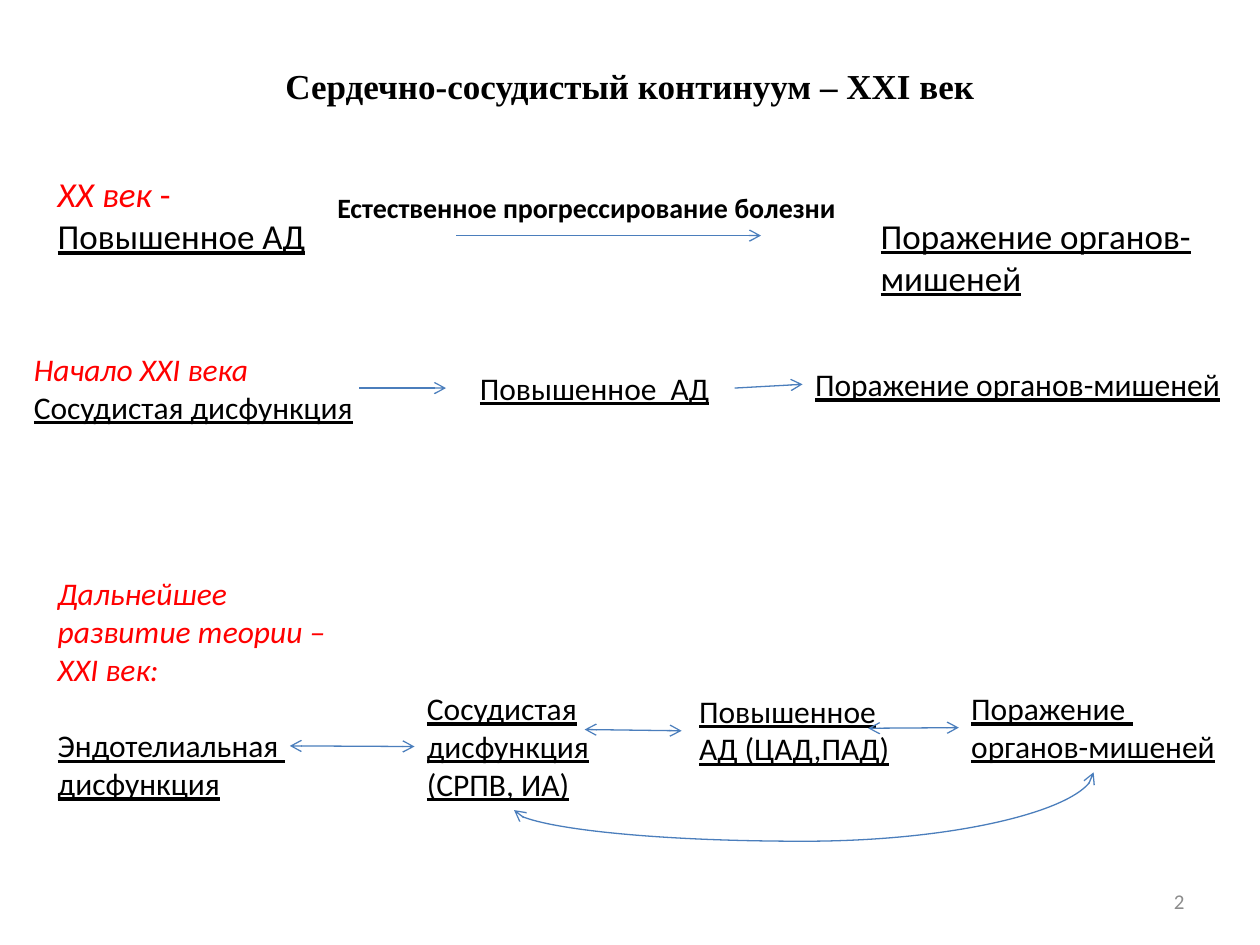
from dataclasses import dataclass

from lxml.etree import SubElement
from pptx import Presentation
from pptx.dml.color import RGBColor
from pptx.enum.shapes import MSO_CONNECTOR
from pptx.enum.text import MSO_ANCHOR, MSO_AUTO_SIZE, PP_ALIGN
from pptx.oxml.ns import qn
from pptx.shapes.autoshape import Shape
from pptx.shapes.connector import Connector
from pptx.slide import Slide
from pptx.util import Inches, Pt

BLACK = RGBColor(0x00, 0x00, 0x00)
RED = RGBColor(0xFF, 0x00, 0x00)
GRAY = RGBColor(0x8C, 0x8C, 0x8C)
BLUE = RGBColor(0x4B, 0x7E, 0xBC)
TOP, LEFT, BOTTOM, RIGHT = range(4)


@dataclass(frozen=True)
class Line:
    text: str
    color: RGBColor = BLACK
    bold: bool = False
    italic: bool = False
    underline: bool = False
    space_before: float = 0
    upright_ending: str = ""


@dataclass(frozen=True)
class Label:
    left: float
    top: float
    width: float
    height: float
    lines: tuple[Line, ...]
    size: float = 18
    wrap: bool = True
    font: str = "Calibri"
    align: PP_ALIGN = PP_ALIGN.LEFT
    anchor: MSO_ANCHOR = MSO_ANCHOR.TOP
    grow: bool = True


@dataclass(frozen=True)
class Arrow:
    begin: tuple[float, float]
    end: tuple[float, float]
    double: bool = False
    begin_site: tuple[str, int] | None = None
    end_site: tuple[str, int] | None = None


def factor(text: str, space_before: float = 0) -> Line:
    return Line(text, underline=True, space_before=space_before)


def era(text: str, upright_ending: str = "") -> Line:
    return Line(text, RED, italic=True, upright_ending=upright_ending)


LABELS = {
    "title": Label(0.5, 0.21, 9, 0.94,
                   (Line("Сердечно-сосудистый континуум – XXI век", bold=True),),
                   size=20, font="Times New Roman", align=PP_ALIGN.CENTER,
                   anchor=MSO_ANCHOR.MIDDLE, grow=False),
    "slide number": Label(7.17, 6.95, 2.33, 0.4, (Line("2", GRAY),), size=12,
                          align=PP_ALIGN.RIGHT, anchor=MSO_ANCHOR.MIDDLE, grow=False),
    "old pressure": Label(0.36, 1.32, 3.15, 0.77,
                          (era("ХХ век ", "-"), factor("Повышенное АД")), size=20),
    "old damage": Label(6.89, 1.65, 2.89, 0.77,
                        (factor("Поражение органов-мишеней"),), size=20),
    "progression": Label(2.58, 1.46, 4.2, 0.37,
                         (Line("Естественное прогрессирование болезни", bold=True),),
                         size=16, wrap=False),
    "early dysfunction": Label(0.17, 2.73, 3.5, 0.71,
                               (era("Начало XXI века"), factor("Сосудистая дисфункция"))),
    "early pressure": Label(3.71, 2.88, 2.12, 0.4, (factor("Повышенное  АД"),), wrap=False),
    "early damage": Label(6.37, 2.85, 3.45, 0.4,
                          (factor("Поражение органов-мишеней"),), wrap=False),
    "endothelial": Label(0.36, 4.51, 2.49, 1.92,
                         (era("Дальнейшее развитие теории – ХХI век:"),
                          factor("Эндотелиальная ", space_before=22),
                          factor("дисфункция"))),
    "vascular": Label(3.29, 5.42, 1.6, 1.01,
                      (factor("Сосудистая дисфункция"), factor("(СРПВ, ИА)"))),
    "pressure": Label(5.45, 5.44, 1.75, 0.71, (factor("Повышенное АД (ЦАД,ПАД)"),)),
    "damage": Label(7.61, 5.42, 2.16, 0.71,
                    (factor("Поражение "), factor("органов-мишеней")), wrap=False),
}

ARROWS = (
    Arrow((3.62, 1.87), (6.04, 1.87)),
    Arrow((2.85, 3.08), (3.54, 3.08)),
    Arrow((5.83, 3.08), (6.37, 3.05),
          begin_site=("early pressure", RIGHT), end_site=("early damage", LEFT)),
    Arrow((2.3, 5.92), (3.29, 5.92), double=True, end_site=("vascular", LEFT)),
    Arrow((4.64, 5.79), (5.41, 5.8), double=True),
    Arrow((6.89, 5.78), (7.61, 5.78), double=True, end_site=("damage", LEFT)),
)


def add_label(slide: Slide, label: Label) -> Shape:
    shape = slide.shapes.add_textbox(Inches(label.left), Inches(label.top),
                                     Inches(label.width), Inches(label.height))
    frame = shape.text_frame
    frame.word_wrap = label.wrap
    frame.auto_size = MSO_AUTO_SIZE.SHAPE_TO_FIT_TEXT if label.grow else MSO_AUTO_SIZE.NONE
    frame.vertical_anchor = label.anchor
    for index, line in enumerate(label.lines):
        paragraph = frame.add_paragraph() if index else frame.paragraphs[0]
        paragraph.alignment = label.align
        paragraph.space_before = Pt(line.space_before)
        font = paragraph.font
        font.name, font.size = label.font, Pt(label.size)
        font.bold, font.italic, font.underline = line.bold, line.italic, line.underline
        font.color.rgb = line.color
        paragraph.add_run().text = line.text
        if line.upright_ending:
            ending = paragraph.add_run()
            ending.text = line.upright_ending
            ending.font.italic = False
    return shape


def style_connector(connector: Connector, double: bool) -> None:
    connector.line.color.rgb = BLUE
    connector.line.width = Pt(0.75)
    outline = connector.line._get_or_add_ln()
    for tag in ("a:headEnd", "a:tailEnd") if double else ("a:tailEnd",):
        SubElement(outline, qn(tag), type="arrow")
    SubElement(connector._element.spPr, qn("a:effectLst"))


def add_arrow(slide: Slide, arrow: Arrow, shapes: dict[str, Shape]) -> None:
    connector = slide.shapes.add_connector(
        MSO_CONNECTOR.STRAIGHT, *map(Inches, arrow.begin + arrow.end))
    if arrow.begin_site:
        name, site = arrow.begin_site
        connector.begin_connect(shapes[name], site)
    if arrow.end_site:
        name, site = arrow.end_site
        connector.end_connect(shapes[name], site)
    style_connector(connector, arrow.double)


def add_feedback_curve(slide: Slide) -> None:
    connector = slide.shapes.add_connector(
        MSO_CONNECTOR.CURVE, Inches(6.53), Inches(8.58), Inches(6.23), Inches(3.98))
    properties = connector._element.spPr
    properties.find(qn("a:xfrm")).set("rot", str(90 * 60000))
    adjustments = properties.find(qn("a:prstGeom")).find(qn("a:avLst"))
    SubElement(adjustments, qn("a:gd"), name="adj1", fmla="val -82500")
    style_connector(connector, double=True)


def main() -> None:
    presentation = Presentation()
    presentation.slide_width, presentation.slide_height = Inches(10), Inches(7.5)
    slide = presentation.slides.add_slide(presentation.slide_layouts[6])
    shapes = {name: add_label(slide, label) for name, label in LABELS.items()}
    for arrow in ARROWS:
        add_arrow(slide, arrow, shapes)
    add_feedback_curve(slide)
    presentation.save("out.pptx")


if __name__ == "__main__":
    main()
